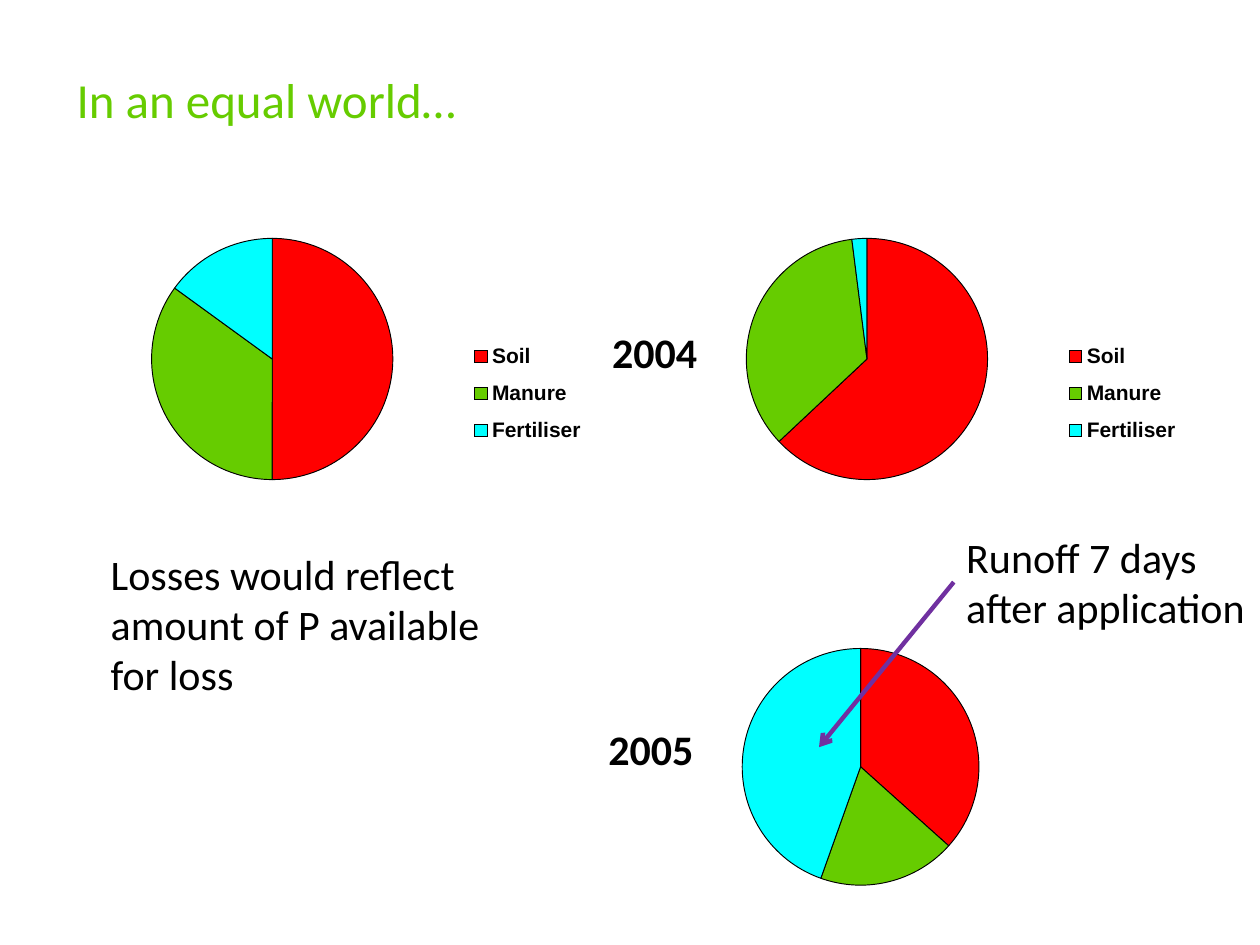
from lxml import etree
from pptx import Presentation
from pptx.chart.data import CategoryChartData
from pptx.dml.color import RGBColor
from pptx.enum.chart import XL_CHART_TYPE, XL_LEGEND_POSITION
from pptx.enum.shapes import MSO_CONNECTOR
from pptx.enum.text import MSO_ANCHOR
from pptx.oxml.ns import qn
from pptx.util import Inches, Pt

RED = RGBColor(0xFF, 0x00, 0x00)
GREEN = RGBColor(0x66, 0xCC, 0x00)
CYAN = RGBColor(0x00, 0xFF, 0xFF)
BLACK = RGBColor(0x00, 0x00, 0x00)
PURPLE = RGBColor(0x70, 0x30, 0xA0)

prs = Presentation()
prs.slide_width, prs.slide_height = Inches(10), Inches(7.5)
s = prs.slides.add_slide(prs.slide_layouts[6])


def add_text(box, lines, size=24, color=BLACK, bold=False, wrap=False, spacing=None):
    sp = s.shapes.add_textbox(*[Inches(v) for v in box])
    tf = sp.text_frame
    tf.word_wrap = wrap
    tf.vertical_anchor = MSO_ANCHOR.TOP
    tf.text = "\n".join(lines)
    for p in tf.paragraphs:
        p.line_spacing = spacing
        p.font.name = "Calibri"
        p.font.size = Pt(size)
        p.font.bold = bold
        p.font.color.rgb = color
    return sp


def make_layout(x, y, w, h, inner=False):
    layout = etree.Element(qn("c:layout"))
    manual = etree.SubElement(layout, qn("c:manualLayout"))
    values = [("xMode", "edge"), ("yMode", "edge"), ("x", x), ("y", y), ("w", w), ("h", h)]
    if inner:
        values.insert(0, ("layoutTarget", "inner"))
    for tag, value in values:
        etree.SubElement(manual, qn("c:" + tag)).set("val", str(value))
    return layout


# Title
add_text((0.51, 0.5, 8.45, 0.78), ["In an equal world…"], 28, GREEN, wrap=True)

# Pie charts: box, categories, values, plot area, legend shown
sources = ["Soil", "Manure", "Fertiliser"]
upper_plot = (0.12, 0.08, 0.55, 0.84)
pies = [
    ((5.09, 4.91, 3.48, 2.33), ["1", "2", "3"], (37, 19, 45), (0.23, 0.09, 0.54, 0.83), False),
    ((5.23, 1.71, 4.18, 2.28), sources, (63, 35, 2), upper_plot, True),
    ((0.51, 1.71, 4.18, 2.28), sources, (50, 35, 15), upper_plot, True),
]
for box, categories, values, plot_box, has_legend in pies:
    data = CategoryChartData()
    data.categories = categories
    data.add_series("Series 1", values)
    chart = s.shapes.add_chart(XL_CHART_TYPE.PIE, *[Inches(v) for v in box], data).chart
    chart.has_title = False
    chart.font.name = "Arial"
    chart.font.size = Pt(9.7)
    chart.font.bold = True
    chart.font.color.rgb = BLACK

    plot = chart.plots[0]
    plot.vary_by_categories = True
    for i, color in enumerate((RED, GREEN, CYAN)):
        fmt = plot.series[0].points[i].format
        fmt.fill.solid()
        fmt.fill.fore_color.rgb = color
        fmt.line.color.rgb = BLACK
        fmt.line.width = Pt(0.55)

    plot_area = chart.element.find(".//" + qn("c:plotArea"))
    for old in plot_area.findall(qn("c:layout")):
        plot_area.remove(old)
    plot_area.insert(0, make_layout(*plot_box, inner=True))

    chart.has_legend = has_legend
    if has_legend:
        legend = chart.legend
        legend.position = XL_LEGEND_POSITION.RIGHT
        legend.include_in_layout = False
        legend.font.name = "Arial"
        legend.font.size = Pt(12)
        legend.font.bold = True
        legend.font.color.rgb = BLACK
        node = chart.element.find(".//" + qn("c:legend"))
        for old in node.findall(qn("c:layout")):
            node.remove(old)
        node.find(qn("c:legendPos")).addnext(make_layout(0.77, 0.4, 0.22, 0.44))

# Year labels
for year, left, top in (("2005", 4.73, 5.65), ("2004", 4.76, 2.5)):
    add_text((left, top, 0.88, 0.53), [year], bold=True, spacing=1.1)

# Comments
add_text((0.78, 4.3, 3.31, 1.31),
         ["Losses would reflect amount of P available for loss"], wrap=True)
runoff = add_text((7.57, 4.17, 2.43, 0.9), ["Runoff 7 days", "after application"])

# Arrow from the runoff comment to the fertiliser slice
arrow = s.shapes.add_connector(MSO_CONNECTOR.STRAIGHT, Inches(7.57), Inches(4.62),
                               Inches(6.5), Inches(5.93))
arrow.begin_connect(runoff, 1)
arrow.line.color.rgb = PURPLE
arrow.line.width = Pt(2.5)
etree.SubElement(arrow.line._get_or_add_ln(), qn("a:tailEnd")).set("type", "arrow")
etree.SubElement(arrow._element.spPr, qn("a:effectLst"))

prs.save("out.pptx")
